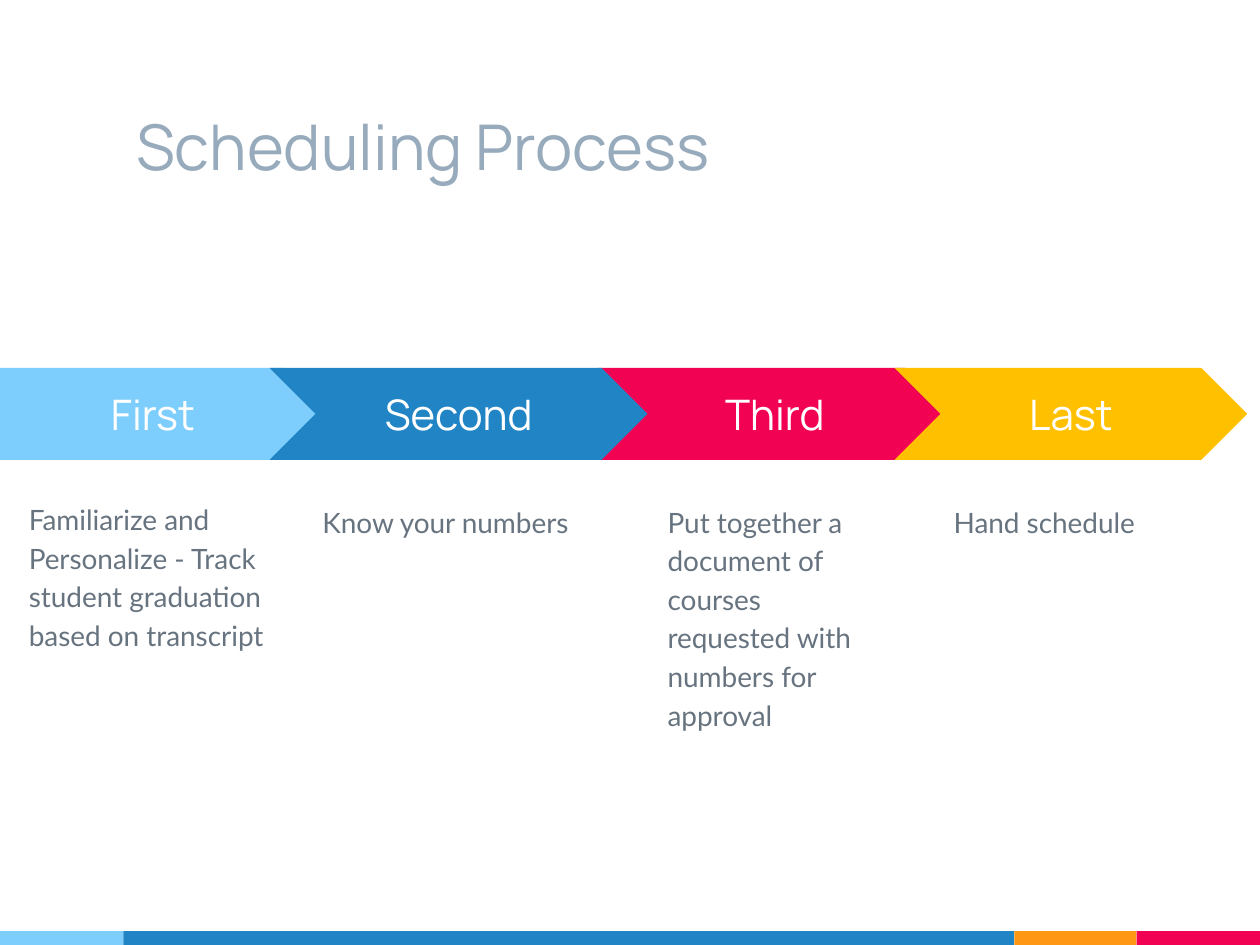
from pptx import Presentation
from pptx.dml.color import RGBColor
from pptx.enum.shapes import MSO_SHAPE
from pptx.enum.text import MSO_ANCHOR, MSO_AUTO_SIZE, PP_ALIGN
from pptx.util import Inches, Pt

RECT, PLATE, CHEVRON = MSO_SHAPE.RECTANGLE, MSO_SHAPE.PENTAGON, MSO_SHAPE.CHEVRON
TOP, MIDDLE, BOTTOM = MSO_ANCHOR.TOP, MSO_ANCHOR.MIDDLE, MSO_ANCHOR.BOTTOM
LEFT, CENTER = PP_ALIGN.LEFT, PP_ALIGN.CENTER
FIXED = MSO_AUTO_SIZE.NONE

SKY = RGBColor(0x7E, 0xCE, 0xFD)
BLUE = RGBColor(0x21, 0x85, 0xC5)
ORANGE = RGBColor(0xFF, 0x97, 0x15)
RED = RGBColor(0xF2, 0x02, 0x53)
GOLD = RGBColor(0xFF, 0xC0, 0x00)
MIST = RGBColor(0x97, 0xAB, 0xBC)
SLATE = RGBColor(0x67, 0x74, 0x80)
WHITE = RGBColor(0xFF, 0xFF, 0xFF)
HEAD, BODY = "Manrope", "Lato"

STRIPES = [(0.98, SKY), (7.07, BLUE), (0.97, ORANGE), (0.98, RED)]
STEPS = [
    ("Third", CHEVRON, RED, (4.75, 2.8), (5.2, 3.87, 1.89, 2.86),
     "Put together a document of courses requested with numbers for approval"),
    ("First", PLATE, SKY, (0, 2.61), (0.13, 3.85, 2.45, 2.86),
     "Familiarize and Personalize - Track student graduation based on transcript"),
    ("Second", CHEVRON, BLUE, (2.14, 3), (2.46, 3.87, 2.29, 2.86),
     "Know your numbers"),
    ("Last", CHEVRON, GOLD, (7.1, 2.8), (7.47, 3.87, 1.89, 2.86),
     "Hand schedule"),
]


def inch(box):
    """Turn a box of numbers into lengths."""
    return [Inches(n) for n in box]


def write(shape, text, size, color, font=HEAD, align=LEFT, anchor=TOP, space=1.0):
    """Put formatted text in a shape."""
    frame = shape.text_frame
    frame.auto_size = FIXED
    frame.word_wrap = True
    frame.vertical_anchor = anchor
    frame.margin_left = frame.margin_right = Inches(0.1)
    frame.margin_top = frame.margin_bottom = Inches(0.1)
    para = frame.paragraphs[0]
    para.alignment = align
    para.line_spacing = space
    run = para.add_run()
    run.text = text
    run.font.size = Pt(size)
    run.font.name = font
    run.font.color.rgb = color


def block(slide, kind, box, color):
    """Add a flat shape with one fill."""
    shape = slide.shapes.add_shape(kind, *inch(box))
    shape.shadow.inherit = False
    shape.fill.solid()
    shape.fill.fore_color.rgb = color
    shape.line.fill.background()
    return shape


def footer(slide, box):
    """Lay the colour stripes from left to right."""
    left, top, _, height = box
    for width, color in STRIPES:
        block(slide, RECT, (left, top, width, height), color)
        left += width


def title(slide, box):
    """Place the slide title."""
    shape = slide.shapes.title
    shape.left, shape.top, shape.width, shape.height = inch(box)
    write(shape, "Scheduling Process", 36, MIST, anchor=BOTTOM)


def step(slide, box, name, kind, color, area, note):
    """Add an arrow and the note below it."""
    arrow = block(slide, kind, box, color)
    arrow.adjustments[0] = 0.5
    write(arrow, name, 24, WHITE, align=CENTER, anchor=MIDDLE)
    label = slide.shapes.add_textbox(*inch(area))
    write(label, note, 16, SLATE, font=BODY, space=1.15)


def main():
    """Build and save the slide."""
    deck = Presentation()
    deck.slide_width, deck.slide_height = Inches(10), Inches(7.5)
    slide = deck.slides.add_slide(deck.slide_layouts[5])
    footer(slide, (0, 7.39, 10, 0.11))
    title(slide, (0.98, 0.3, 7.07, 1.25))
    for name, kind, color, (left, width), area, note in STEPS:
        step(slide, (left, 2.92, width, 0.73), name, kind, color, area, note)
    deck.save("out.pptx")


if __name__ == "__main__":
    main()
